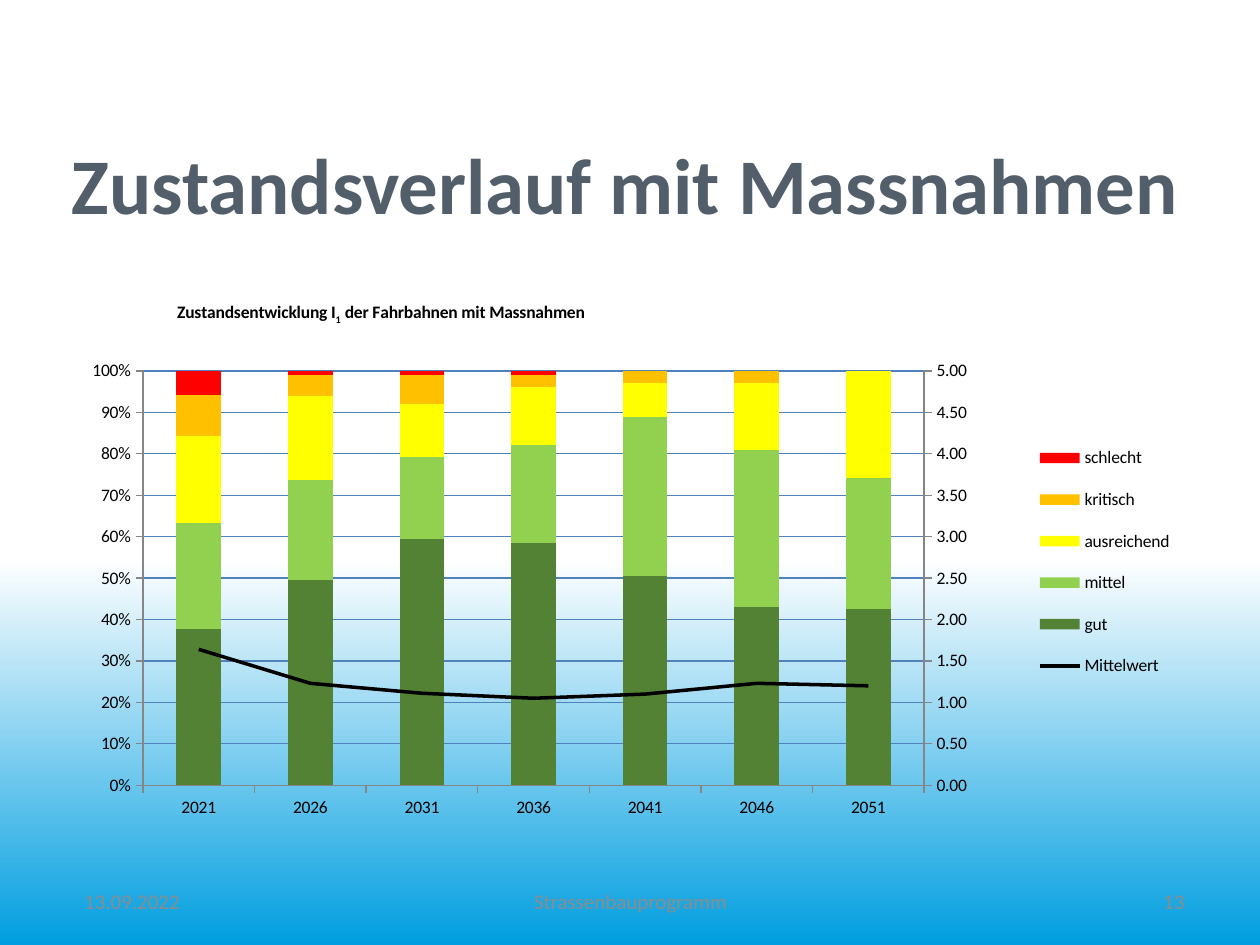
from lxml.etree import SubElement
from pptx import Presentation
from pptx.chart.data import CategoryChartData
from pptx.dml.color import RGBColor
from pptx.enum.chart import XL_CHART_TYPE, XL_LEGEND_POSITION, XL_TICK_MARK
from pptx.enum.text import MSO_ANCHOR, PP_ALIGN
from pptx.oxml import parse_xml
from pptx.oxml.ns import nsdecls, qn
from pptx.util import Inches, Pt

YEARS = ["2021", "2026", "2031", "2036", "2041", "2046", "2051"]
CONDITIONS = [
    ("gut", "548235", [38, 49, 60, 59, 50, 43, 43]),
    ("mittel", "92D050", [26, 24, 20, 24, 38, 38, 32]),
    ("ausreichend", "FFFF00", [21, 20, 13, 14, 8, 16, 26]),
    ("kritisch", "FFC000", [10, 5, 7, 3, 3, 3, 0]),
    ("schlecht", "FF0000", [6, 1, 1, 1, 0, 0, 0]),
]
MEANS = [1.64, 1.23, 1.11, 1.05, 1.1, 1.23, 1.2]

LINE_CHART = f"""<c:lineChart {nsdecls('c')}>
  <c:grouping val="standard"/><c:varyColors val="0"/>
  <c:marker val="1"/><c:axId val="5001"/><c:axId val="5002"/>
</c:lineChart>"""
HIDDEN_CATEGORY_AXIS = f"""<c:catAx {nsdecls('c')}>
  <c:axId val="5001"/><c:scaling><c:orientation val="minMax"/></c:scaling>
  <c:delete val="1"/><c:axPos val="b"/><c:crossAx val="5002"/>
  <c:crosses val="autoZero"/>
</c:catAx>"""
RIGHT_AXIS = f"""<c:valAx {nsdecls('c', 'a')}>
  <c:axId val="5002"/>
  <c:scaling><c:orientation val="minMax"/><c:max val="5"/><c:min val="0"/></c:scaling>
  <c:delete val="0"/><c:axPos val="r"/>
  <c:numFmt formatCode="0.00" sourceLinked="0"/>
  <c:majorTickMark val="out"/><c:minorTickMark val="none"/><c:tickLblPos val="nextTo"/>
  <c:spPr><a:ln w="9525"><a:solidFill><a:srgbClr val="868686"/></a:solidFill></a:ln></c:spPr>
  <c:crossAx val="5001"/><c:crosses val="max"/><c:majorUnit val="0.5"/>
</c:valAx>"""


def rgb(value):
    return RGBColor.from_string(value)


def add_text(p, text, size=10, color="000000", bold=False, subscript=False):
    r = p.add_run()
    r.text = text
    r.font.name = "Calibri"
    r.font.size = Pt(size)
    r.font.bold = bold
    r.font.color.rgb = rgb(color)
    if subscript:
        r.font._element.set("baseline", "-25000")


def manual_layout(x, y, w=None, h=None, inner=False):
    layout = parse_xml(f"<c:layout {nsdecls('c')}><c:manualLayout/></c:layout>")
    parts = [("layoutTarget", "inner")] if inner else []
    parts += [("xMode", "edge"), ("yMode", "edge"), ("x", x), ("y", y), ("w", w), ("h", h)]
    for tag, value in parts:
        if value is not None:
            SubElement(layout[0], qn(f"c:{tag}")).set("val", str(value))
    return layout


def set_layout(parent, layout, after=None):
    for old in parent.findall(qn("c:layout")):
        parent.remove(old)
    if after is None:
        parent.insert(0, layout)
    else:
        parent.find(qn(after)).addnext(layout)


class SlideBuilder:
    heading = "525E6A"
    muted = "8C8C8C"
    axis = "868686"
    grid = "4F81BD"

    def __init__(self, prs):
        self.s = prs.slides.add_slide(prs.slide_layouts[5])

    def background(self):
        fill = self.s.background.fill
        fill.gradient()
        fill.gradient_angle = 270
        for stop, position, color in zip(fill.gradient_stops, (0.59, 1), ("FFFFFF", "009EE0")):
            stop.position = position
            stop.color.rgb = rgb(color)

    def title(self, text):
        sp = self.s.shapes.title
        sp.left, sp.top, sp.width, sp.height = map(Inches, (0.57, 1.08, 8.96, 1.04))
        tf = sp.text_frame
        tf.margin_left = tf.margin_top = tf.margin_right = tf.margin_bottom = 0
        tf.vertical_anchor = MSO_ANCHOR.TOP
        tf.word_wrap = True
        p = tf.paragraphs[0]
        p.alignment = PP_ALIGN.LEFT
        add_text(p, text, size=45, color=self.heading, bold=True)

    def footer(self, text, left, width, align):
        sp = self.s.shapes.add_textbox(Inches(left), Inches(6.95), Inches(width), Inches(0.4))
        tf = sp.text_frame
        tf.word_wrap = True
        tf.vertical_anchor = MSO_ANCHOR.MIDDLE
        p = tf.paragraphs[0]
        p.alignment = align
        add_text(p, text, size=12, color=self.muted)

    def condition_chart(self):
        data = CategoryChartData()
        data.categories = YEARS
        for name, _, values in CONDITIONS:
            data.add_series(name, values)
        data.add_series("Mittelwert", MEANS, number_format="0.00")
        chart = self.s.shapes.add_chart(
            XL_CHART_TYPE.COLUMN_STACKED_100, Inches(0.57), Inches(2.12),
            Inches(8.96), Inches(4.68), data).chart
        chart.font.name = "Calibri"
        chart.font.size = Pt(10)
        chart.font.color.rgb = rgb("000000")

        # Stacked columns
        plot = chart.plots[0]
        plot.vary_by_categories = False
        plot.gap_width = 150
        plot.overlap = 100
        *columns, mean = plot.series
        for series, (_, color, _) in zip(columns, CONDITIONS):
            series.format.fill.solid()
            series.format.fill.fore_color.rgb = rgb(color)

        # Left and bottom axes
        for axis in (chart.category_axis, chart.value_axis):
            axis.major_tick_mark = XL_TICK_MARK.OUTSIDE
            axis.format.line.color.rgb = rgb(self.axis)
        axis = chart.value_axis
        axis.minimum_scale, axis.maximum_scale, axis.major_unit = 0, 1, 0.1
        axis.tick_labels.number_format = "0%"
        axis.tick_labels.number_format_is_linked = False
        axis.major_gridlines.format.line.color.rgb = rgb(self.grid)
        axis.major_gridlines.format.line.width = Pt(0.75)

        self.mean_line(chart, mean)
        self.chart_title(chart)
        self.legend(chart)

    def mean_line(self, chart, mean):
        """Move the mean series to a line plot on a right-hand axis."""
        mean.format.line.color.rgb = rgb("000000")
        mean.format.line.width = Pt(2)
        ser = mean._element
        area = chart._chartSpace.chart.plotArea
        line = parse_xml(LINE_CHART)
        area.find(qn("c:barChart")).addnext(line)
        line.find(qn("c:varyColors")).addnext(ser)
        for flag in ser.findall(qn("c:invertIfNegative")):
            ser.remove(flag)
        marker = parse_xml(f'<c:marker {nsdecls("c")}><c:symbol val="none"/></c:marker>')
        ser.find(qn("c:spPr")).addnext(marker)
        SubElement(ser, qn("c:smooth")).set("val", "0")
        last_axis = area.find(qn("c:valAx"))
        last_axis.addnext(parse_xml(RIGHT_AXIS))
        last_axis.addnext(parse_xml(HIDDEN_CATEGORY_AXIS))
        set_layout(area, manual_layout(0.063, 0.176, 0.692, 0.703, inner=True))

    def chart_title(self, chart):
        title = chart.chart_title
        p = title.text_frame.paragraphs[0]
        add_text(p, "Zustandsentwicklung I", bold=True)
        add_text(p, "1", bold=True, subscript=True)
        add_text(p, " der Fahrbahnen mit Massnahmen", bold=True)
        set_layout(title._element, manual_layout(0.09, 0.05), after="c:tx")
        title._element.find(qn("c:overlay")).set("val", "1")

    def legend(self, chart):
        chart.has_legend = True
        legend = chart.legend
        legend.position = XL_LEGEND_POSITION.RIGHT
        legend.include_in_layout = False
        set_layout(legend._element, manual_layout(0.84, 0.27, 0.15, 0.46), after="c:legendPos")


def main():
    prs = Presentation()
    prs.slide_width, prs.slide_height = Inches(10), Inches(7.5)
    slide = SlideBuilder(prs)
    slide.background()
    slide.title("Zustandsverlauf mit Massnahmen")
    slide.footer("13.09.2022", 0.57, 2.33, PP_ALIGN.LEFT)
    slide.footer("Strassenbauprogramm", 3.42, 3.17, PP_ALIGN.CENTER)
    slide.footer("13", 7.17, 2.33, PP_ALIGN.RIGHT)
    slide.condition_chart()
    prs.save("out.pptx")


if __name__ == "__main__":
    main()
